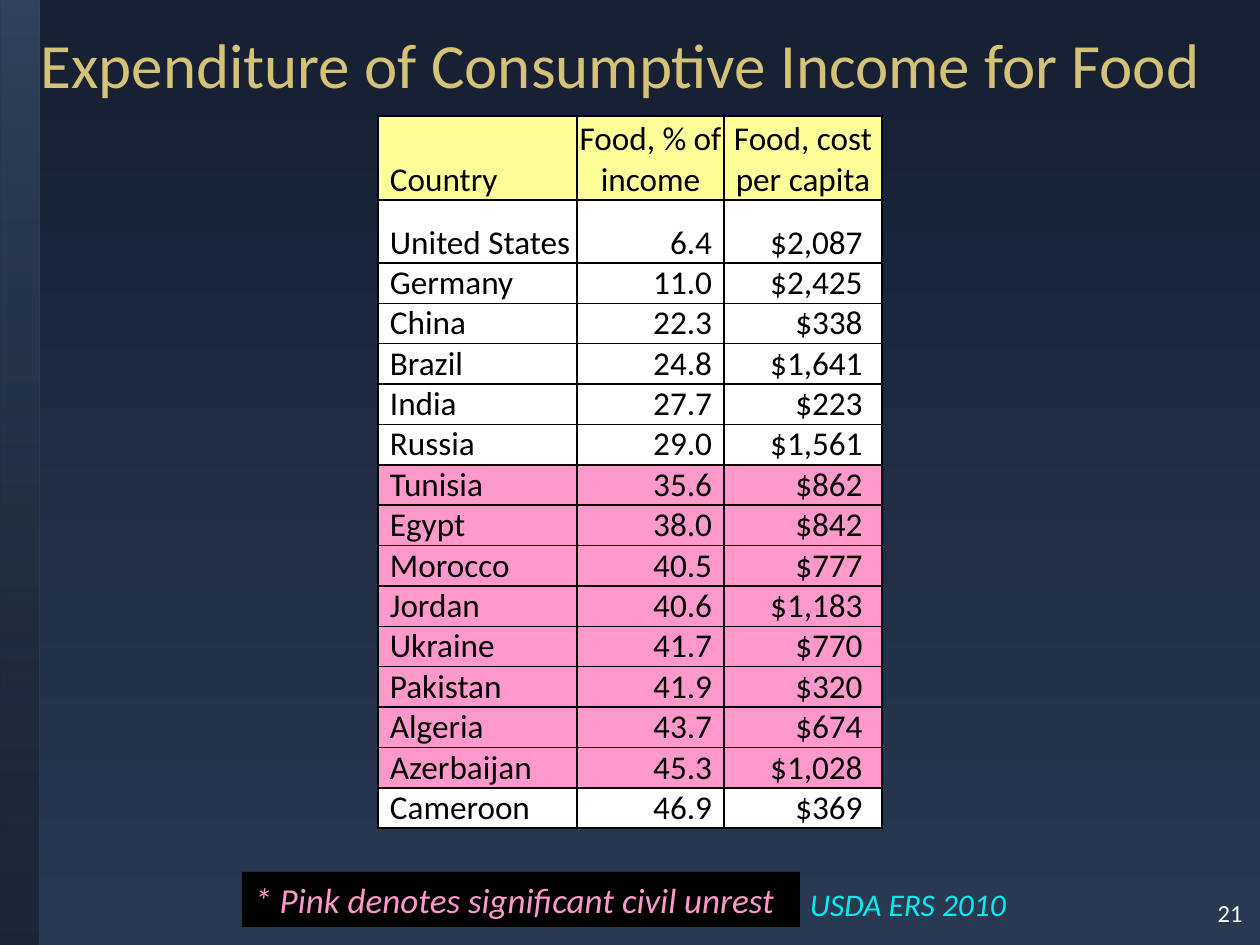
from pptx import Presentation
from pptx import util as u
from pptx.dml.color import RGBColor
from pptx.enum import shapes, text
from pptx.oxml.ns import qn
from lxml import etree

PX = 914400 // 126
LEFT, MID, RIGHT = text.PP_ALIGN.LEFT, text.PP_ALIGN.CENTER, text.PP_ALIGN.RIGHT


def rgb(code):
    return RGBColor.from_string(code)


def write(frame, words, size, color, align, anchor, slant=False):
    frame.word_wrap = True
    frame.vertical_anchor = anchor
    para = frame.paragraphs[0]
    para.alignment = align
    run = para.add_run()
    run.text = words
    run.font.size = u.Pt(size)
    run.font.name = "Calibri"
    run.font.italic = slant
    run.font.color.rgb = rgb(color)


deck = Presentation()
deck.slide_width = 1260 * PX
deck.slide_height = 945 * PX
slide = deck.slides.add_slide(deck.slide_layouts[6])

back = slide.background.fill
back.gradient()
back.gradient_angle = 270
for stop, (color, place) in zip(back.gradient_stops, [("182033", 0.06), ("283951", 0.99)]):
    stop.color.rgb = rgb(color)
    stop.position = place

shade = [("000000", 0, 39)]
glow = [("5E7EA4", 0, 26), ("343F56", 0.99, 8)]
for stops in (shade, glow, glow):
    strip = slide.shapes.add_shape(
        shapes.MSO_SHAPE.RECTANGLE, -453 * PX, 453 * PX, 945 * PX, 39 * PX)
    strip.rotation = 90
    strip.shadow.inherit = False
    strip.line.fill.background()
    if len(stops) == 1:
        strip.fill.solid()
        strip.fill.fore_color.rgb = rgb(stops[0][0])
    else:
        strip.fill.gradient()
        strip.fill.gradient_angle = 0
        for stop, (color, place, clear) in zip(strip.fill.gradient_stops, stops):
            stop.color.rgb = rgb(color)
            stop.position = place
    for node, (color, place, clear) in zip(strip._element.spPr.iter(qn("a:srgbClr")), stops):
        etree.SubElement(node, qn("a:alpha"), val=str(clear * 1000))

labels = [
    ("21", 1169, 892, 86, 53, 14, "FFFFFF", RIGHT, text.MSO_ANCHOR.TOP, False),
    ("Expenditure of Consumptive Income for Food", 0, 0, 1241, 126, 36, "D4C276",
     MID, text.MSO_ANCHOR.MIDDLE, False),
    ("USDA ERS 2010", 766, 872, 284, 63, 18, "02EEEE", MID, text.MSO_ANCHOR.MIDDLE, True),
]

rows = [
    ("Country", "Food, % of income", "Food, cost per capita"),
    ("United States", "6.4", "$2,087 "),
    ("Germany", "11.0", "$2,425 "),
    ("China", "22.3", "$338 "),
    ("Brazil", "24.8", "$1,641 "),
    ("India", "27.7", "$223 "),
    ("Russia", "29.0", "$1,561 "),
    ("Tunisia", "35.6", "$862 "),
    ("Egypt", "38.0", "$842 "),
    ("Morocco", "40.5", "$777 "),
    ("Jordan", "40.6", "$1,183 "),
    ("Ukraine", "41.7", "$770 "),
    ("Pakistan", "41.9", "$320 "),
    ("Algeria", "43.7", "$674 "),
    ("Azerbaijan", "45.3", "$1,028 "),
    ("Cameroon", "46.9", "$369 "),
]
unrest = range(7, 15)
grid = slide.shapes.add_table(len(rows), 3, 378 * PX, 116 * PX, 504 * PX, 707 * PX).table
grid.first_row = grid.horz_banding = False
for col, width in zip(grid.columns, (199, 147, 158)):
    col.width = width * PX
for r, row in enumerate(rows):
    grid.rows[r].height = {0: 84, 1: 63}.get(r, 40) * PX
    tint = "FFFF99" if r == 0 else "FF99CC" if r in unrest else "FFFFFF"
    for c, words in enumerate(row):
        cell = grid.cell(r, c)
        cell.margin_top = cell.margin_bottom = 0
        cell.margin_left = 0 if c else 12 * PX
        cell.margin_right = 12 * PX if c and r else 0
        cell.vertical_anchor = text.MSO_ANCHOR.BOTTOM
        align = LEFT if c == 0 else RIGHT if r else MID
        write(cell.text_frame, words, 19, "000000", align, None)
        props = cell._tc.get_or_add_tcPr()
        for side in ("a:lnL", "a:lnR", "a:lnT", "a:lnB"):
            edge = etree.SubElement(props, qn(side), w="12700")
            paint = etree.SubElement(edge, qn("a:solidFill"))
            etree.SubElement(paint, qn("a:srgbClr"), val="000000")
        cell.fill.solid()
        cell.fill.fore_color.rgb = rgb(tint)

note = slide.shapes.add_shape(
    shapes.MSO_SHAPE.RECTANGLE, 242 * PX, 872 * PX, 558 * PX, 55 * PX)
note.shadow.inherit = False
note.fill.solid()
note.fill.fore_color.rgb = rgb("000000")
note.line.fill.background()
write(note.text_frame, "* Pink denotes significant civil unrest", 20, "FF99CC",
      LEFT, text.MSO_ANCHOR.TOP, True)

for words, x, y, w, h, *style in labels:
    box = slide.shapes.add_textbox(x * PX, y * PX, w * PX, h * PX)
    write(box.text_frame, words, *style)

deck.save("out.pptx")
